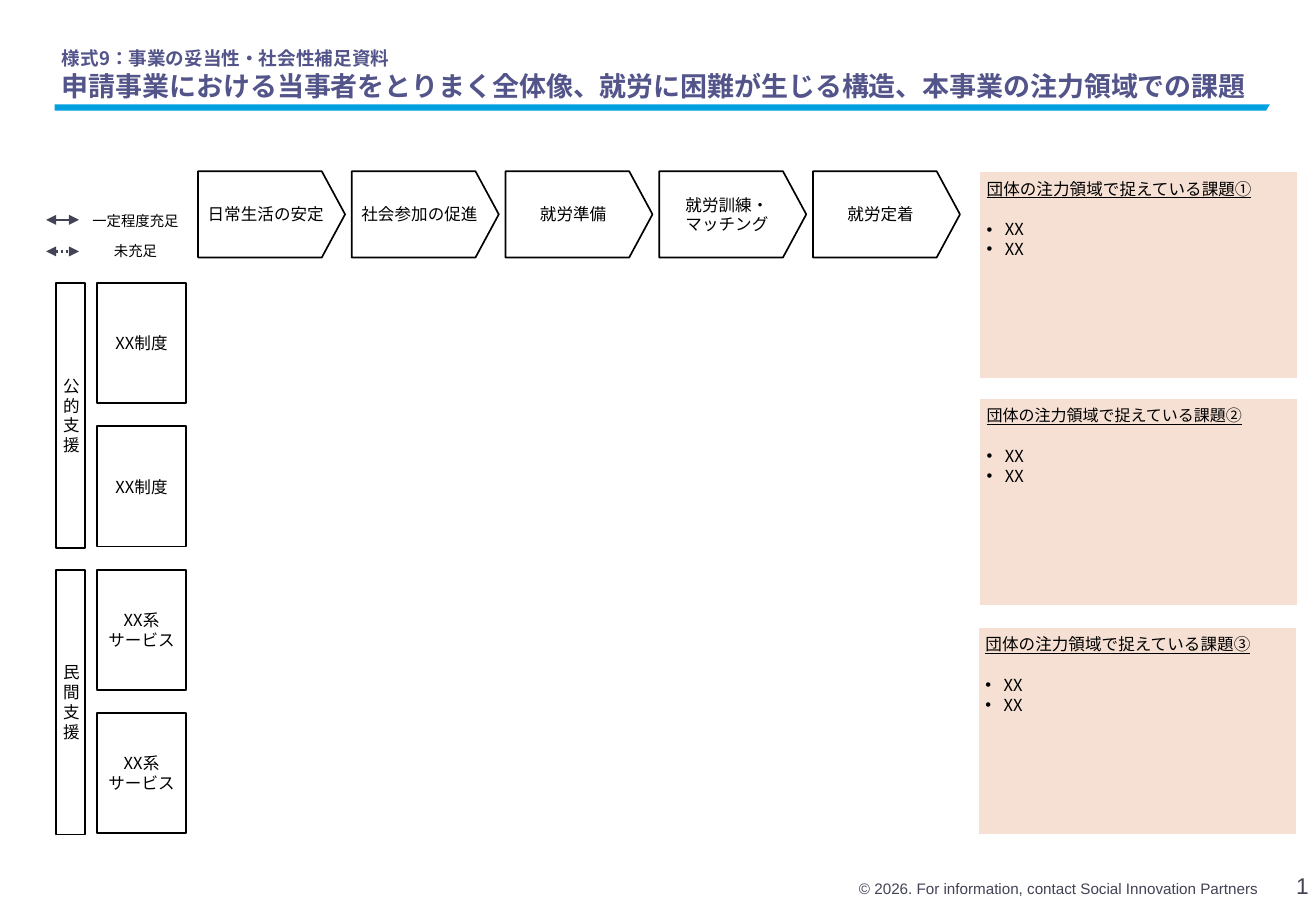
from copy import deepcopy
from dataclasses import dataclass

from lxml import etree
from pptx import Presentation
from pptx.dml.color import RGBColor
from pptx.enum.dml import MSO_LINE
from pptx.enum.lang import MSO_LANGUAGE_ID as Language
from pptx.enum.shapes import MSO_CONNECTOR, MSO_SHAPE
from pptx.enum.text import MSO_ANCHOR as Anchor, PP_ALIGN as Align
from pptx.oxml.ns import qn
from pptx.util import Inches, Pt

COLORS = {"ink": "000000", "title": "53548A", "muted": "424456",
          "rule": "00A1DE", "panel": "F5E0D3", "white": "FFFFFF"}
JAPANESE = "Noto Sans CJK JP"
BODY_SIZE = 9.8
INSET = 0.06


@dataclass
class Box:
    text: str
    left: float
    top: float
    width: float
    height: float
    kind: MSO_SHAPE = MSO_SHAPE.RECTANGLE


@dataclass
class Label:
    text: str
    left: float
    top: float
    width: float
    height: float
    sizes: tuple[float, ...]  # one size for each line
    font: str = JAPANESE
    color: str = "muted"
    align: Align = Align.RIGHT
    anchor: Anchor = Anchor.BOTTOM
    inset: float = 0
    bold: bool = False


@dataclass
class Panel:
    heading: str
    left: float
    top: float
    heading_size: float = BODY_SIZE


@dataclass
class Legend:
    text: str
    arrow_y: float
    label_top: float
    dotted: bool


def rgb(name: str) -> RGBColor:
    return RGBColor.from_string(COLORS[name])


def format_run(run, size: float, color: str, font: str) -> None:
    run.font.size = Pt(size)
    run.font.name = font
    run.font.color.rgb = rgb(color)
    if font == JAPANESE:
        run.font.language_id = Language.JAPANESE
    east_asian = etree.Element(qn("a:ea"), typeface=font)
    run.font._element.find(qn("a:latin")).addnext(east_asian)


def format_paragraph(paragraph, sizes: tuple[float, ...], color: str, align: Align,
                     font: str = JAPANESE) -> None:
    paragraph.alignment = align
    for index, run in enumerate(paragraph.runs):
        format_run(run, sizes[min(index, len(sizes) - 1)], color, font)
    # Line breaks take the character format of the first line
    for line_break in paragraph._p.findall(qn("a:br")):
        line_break.insert(0, deepcopy(paragraph.runs[0]._r.rPr))


def prepare_frame(text_frame, anchor: Anchor, inset: float) -> None:
    text_frame.word_wrap = True
    text_frame.vertical_anchor = anchor
    text_frame.margin_left = text_frame.margin_right = Inches(inset)
    text_frame.margin_top = text_frame.margin_bottom = Inches(inset)


def add_label(slide, label: Label) -> None:
    shape = slide.shapes.add_textbox(Inches(label.left), Inches(label.top),
                                     Inches(label.width), Inches(label.height))
    prepare_frame(shape.text_frame, label.anchor, label.inset)
    shape.text_frame.text = label.text
    paragraph = shape.text_frame.paragraphs[0]
    format_paragraph(paragraph, label.sizes, label.color, label.align, label.font)
    for run in paragraph.runs:
        run.font.bold = label.bold


def add_box(slide, box: Box) -> None:
    shape = slide.shapes.add_shape(box.kind, Inches(box.left), Inches(box.top),
                                   Inches(box.width), Inches(box.height))
    shape.shadow.inherit = False
    if box.kind == MSO_SHAPE.PENTAGON:
        shape.adjustments[0] = 0.27
    shape.fill.background()
    shape.line.color.rgb = rgb("ink")
    shape.line.width = Pt(1)
    prepare_frame(shape.text_frame, Anchor.MIDDLE, INSET)
    shape.text_frame.text = box.text
    format_paragraph(shape.text_frame.paragraphs[0], (BODY_SIZE,), "ink", Align.CENTER)


def add_bullet(paragraph) -> None:
    properties = paragraph._p.get_or_add_pPr()
    properties.set("marL", str(Inches(0.15)))
    properties.set("indent", str(-Inches(0.15)))
    etree.SubElement(properties, qn("a:buFont"), typeface="Arial")
    etree.SubElement(properties, qn("a:buChar"), char="•")


def add_panel(slide, panel: Panel) -> None:
    shape = slide.shapes.add_shape(MSO_SHAPE.RECTANGLE, Inches(panel.left),
                                   Inches(panel.top), Inches(2.62), Inches(1.71))
    shape.shadow.inherit = False
    shape.fill.solid()
    shape.fill.fore_color.rgb = rgb("panel")
    shape.line.color.rgb = rgb("white")
    shape.line.width = Pt(1)
    prepare_frame(shape.text_frame, Anchor.TOP, INSET)
    shape.text_frame.text = f"{panel.heading}\nXX\nXX"
    heading, *bullets = shape.text_frame.paragraphs
    format_paragraph(heading, (panel.heading_size,), "ink", Align.LEFT)
    heading.runs[0].font.underline = True
    for bullet in bullets:
        add_bullet(bullet)
        format_paragraph(bullet, (BODY_SIZE,), "ink", Align.LEFT)
    bullets[0].space_before = Pt(12.5)


def add_legend(slide, legend: Legend) -> None:
    arrow = slide.shapes.add_connector(
        MSO_CONNECTOR.STRAIGHT, Inches(0.38), Inches(legend.arrow_y),
        Inches(0.65), Inches(legend.arrow_y))
    arrow.line.color.rgb = rgb("muted")
    arrow.line.width = Pt(1.5)
    if legend.dotted:
        arrow.line.dash_style = MSO_LINE.ROUND_DOT
    line = arrow.line._get_or_add_ln()
    for end in ("a:headEnd", "a:tailEnd"):
        etree.SubElement(line, qn(end), type="triangle")
    etree.SubElement(arrow._element.spPr, qn("a:effectLst"))
    add_label(slide, Label(legend.text, 0.67, legend.label_top, 0.89, 0.31, (8.5,),
                           color="ink", align=Align.CENTER,
                           anchor=Anchor.MIDDLE, inset=INSET))


def add_title_rule(slide) -> None:
    corners = [(10.45, 0.86), (10.42, 0.91), (0.45, 0.91)]
    builder = slide.shapes.build_freeform(Inches(0.45), Inches(0.86))
    builder.add_line_segments([(Inches(x), Inches(y)) for x, y in corners])
    rule = builder.convert_to_shape()
    rule.shadow.inherit = False
    rule.fill.solid()
    rule.fill.fore_color.rgb = rgb("rule")
    rule.line.fill.background()


def main() -> None:
    presentation = Presentation()
    presentation.slide_width = Inches(10.83)
    presentation.slide_height = Inches(7.5)
    slide = presentation.slides.add_slide(presentation.slide_layouts[6])

    # Title, footer and page number
    add_title_rule(slide)
    add_label(slide, Label(
        "様式9：事業の妥当性・社会性補足資料\v"
        "申請事業における当事者をとりまく全体像、就労に困難が生じる構造、本事業の注力領域での課題",
        0.51, 0.13, 10.27, 0.71, (11, 16), color="title", align=Align.LEFT, bold=True))
    add_label(slide, Label("© 2026. For information, contact Social Innovation Partners",
                           5.9, 7.2, 4.45, 0.19, (9,), "Arial"))
    add_label(slide, Label("1", 10.57, 7.21, 0.2, 0.19, (13.5,), "Arial"))

    # Stages towards employment
    stages = ["日常生活の安定", "社会参加の促進", "就労準備", "就労訓練・\vマッチング", "就労定着"]
    stage_pitch = (6.69 - 1.63) / 4
    for index, stage in enumerate(stages):
        add_box(slide, Box(stage, 1.63 + index * stage_pitch, 1.41, 1.21, 0.71,
                           MSO_SHAPE.PENTAGON))

    # Support groups and their services
    row_pitch = 1.18
    for index, group in enumerate(["公的支援", "民間支援"]):
        add_box(slide, Box(group, 0.46, 2.33 + index * 2 * row_pitch, 0.24, 2.18))
    services = ["XX制度", "XX制度", "XX系\vサービス", "XX系\vサービス"]
    for index, service in enumerate(services):
        add_box(slide, Box(service, 0.8, 2.33 + index * row_pitch, 0.73, 0.99))

    # Legend
    for legend in (Legend("一定程度充足", 1.81, 1.66, False),
                   Legend("未充足", 2.07, 1.91, True)):
        add_legend(slide, legend)

    # Issues in the focus area
    for panel in (Panel("団体の注力領域で捉えている課題①", 8.06, 1.41),
                  Panel("団体の注力領域で捉えている課題②", 8.06, 3.28, 9.5),
                  Panel("団体の注力領域で捉えている課題③", 8.05, 5.16)):
        add_panel(slide, panel)

    presentation.save("out.pptx")


if __name__ == "__main__":
    main()
